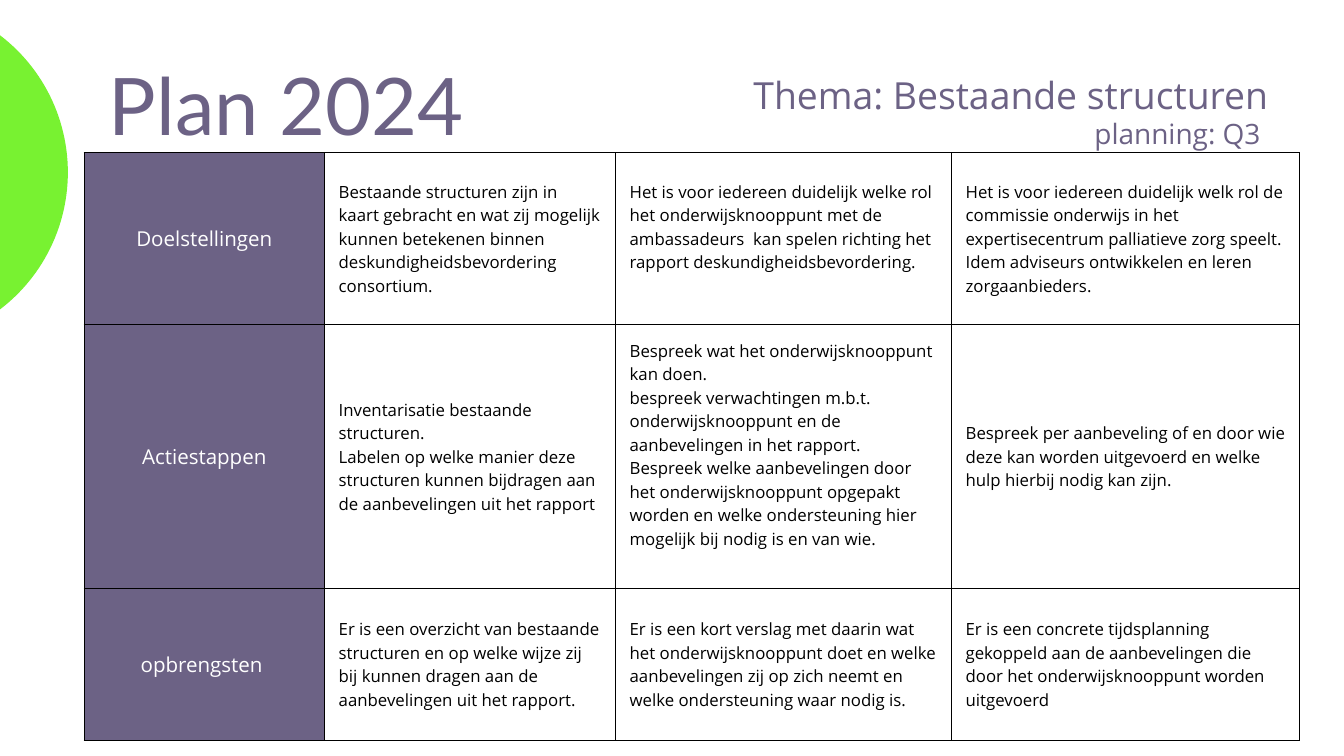
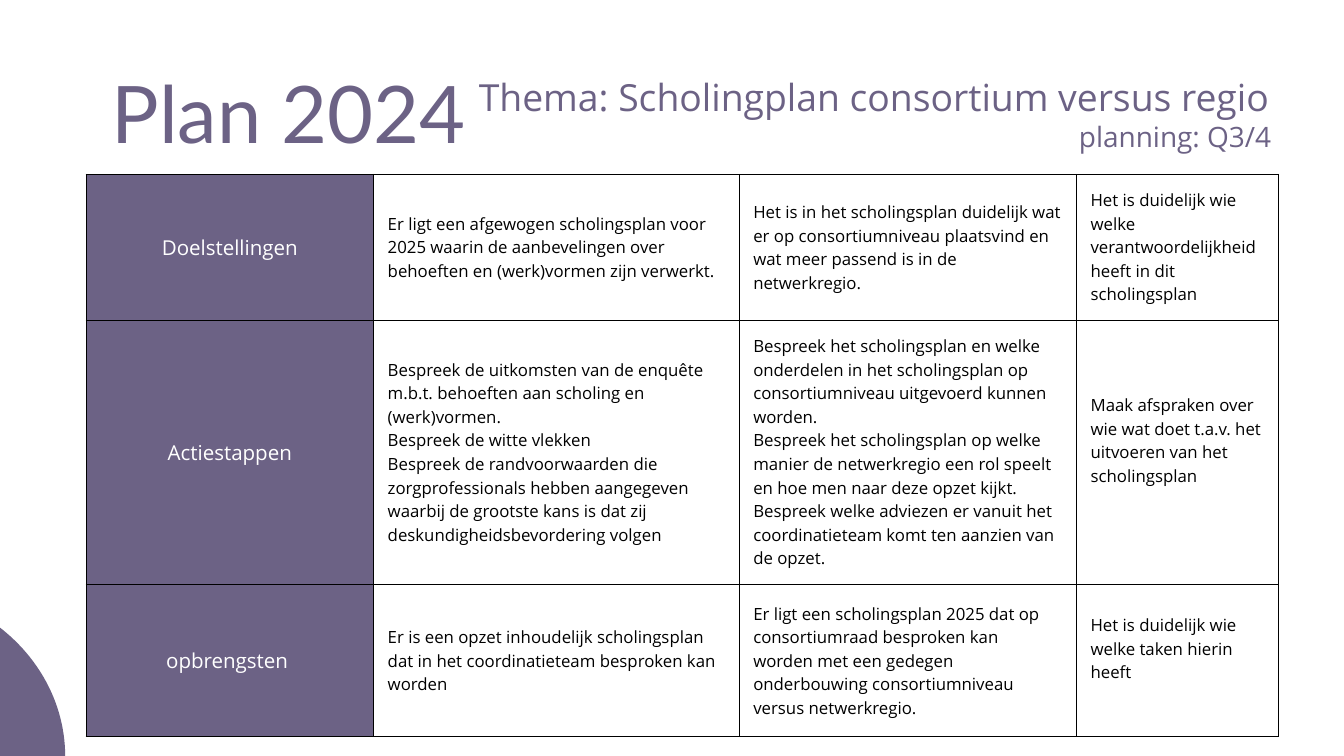
from lxml import etree
from pptx import Presentation
from pptx.dml.color import RGBColor
from pptx.enum.shapes import MSO_SHAPE
from pptx.enum.text import MSO_ANCHOR, MSO_AUTO_SIZE, PP_ALIGN
from pptx.oxml.ns import qn
from pptx.util import Inches, Pt

OVAL = MSO_SHAPE.OVAL
TOP, MIDDLE = MSO_ANCHOR.TOP, MSO_ANCHOR.MIDDLE
GROW = MSO_AUTO_SIZE.SHAPE_TO_FIT_TEXT
LEFT, CENTER, RIGHT = PP_ALIGN.LEFT, PP_ALIGN.CENTER, PP_ALIGN.RIGHT

# Grid of 80 columns by 45 rows on a 20 x 11.25 inch slide
UNIT = 0.25
COLUMNS, ROWS = 80, 45

PURPLE, GREEN, WHITE, BLACK = "6C6285", "78F231", "FFFFFF", "000000"
TITLE_FONT, TEXT_FONT = "Lato", "Open Sans"
ROW_LABELS = ["Doelstellingen", "Actiestappen", "opbrengsten "]
CELL_MARGIN = 0.21
RAISED_MARGIN = 0.56


def grid(value):
    return Inches(value * UNIT)


def color(hex_code):
    return RGBColor.from_string(hex_code)


class PlanDeck:
    def __init__(self):
        self.presentation = Presentation()
        self.presentation.slide_width = grid(COLUMNS)
        self.presentation.slide_height = grid(ROWS)
        self.slide = None

    def add_slide(self):
        layout = self.presentation.slide_layouts[1]
        self.slide = self.presentation.slides.add_slide(layout)

    def format_paragraph(self, paragraph, size, line, font, ink, alignment):
        paragraph.alignment = alignment
        paragraph.line_spacing = Pt(line)
        paragraph.space_before = Pt(0)
        for run in paragraph.runs:
            run.font.size = Pt(size)
            run.font.name = font
            run.font.color.rgb = color(ink)

    def place(self, shape, left, top, width, height):
        shape.left, shape.top = grid(left), grid(top)
        shape.width, shape.height = grid(width), grid(height)
        frame = shape.text_frame
        frame.margin_left = frame.margin_right = 0
        frame.margin_top = frame.margin_bottom = 0
        frame.vertical_anchor = TOP
        frame.word_wrap = True
        frame.auto_size = GROW
        return frame

    def title(self, text, left, top):
        frame = self.place(self.slide.shapes.title, left, top, 24.44, 5.68)
        frame.text = text
        self.format_paragraph(frame.paragraphs[0], 85, 102, TITLE_FONT, PURPLE, RIGHT)

    def theme(self, theme, planning, left, top, width):
        frame = self.place(self.slide.placeholders[1], left, top, width, 4.72)
        frame.text = f"{theme}\n{planning}"
        for paragraph, size in zip(frame.paragraphs, (40, 30)):
            self.format_paragraph(paragraph, size, size * 1.2, TEXT_FONT, PURPLE, RIGHT)
            properties = paragraph._p.get_or_add_pPr()
            properties.set("marL", "0")
            properties.set("indent", "0")
            etree.SubElement(properties, qn("a:buNone"))

    def circle(self, left, top, width, height, fill):
        shape = self.slide.shapes.add_shape(
            OVAL, grid(left), grid(top), grid(width), grid(height))
        shape.shadow.inherit = False
        shape.fill.solid()
        shape.fill.fore_color.rgb = color(fill)
        shape.line.fill.background()

    def border(self, cell):
        properties = cell._tc.get_or_add_tcPr()
        for side in ("lnL", "lnR", "lnT", "lnB"):
            line = etree.SubElement(properties, qn(f"a:{side}"), w=str(Pt(0.75)))
            fill = etree.SubElement(line, qn("a:solidFill"))
            etree.SubElement(fill, qn("a:srgbClr"), val=BLACK)

    def cell(self, cell, text, is_label, is_raised):
        cell.text = text
        cell.vertical_anchor = MIDDLE
        cell.margin_left = cell.margin_right = cell.margin_top = Inches(CELL_MARGIN)
        cell.margin_bottom = Inches(RAISED_MARGIN if is_raised else CELL_MARGIN)
        self.border(cell)
        cell.fill.solid()
        cell.fill.fore_color.rgb = color(PURPLE if is_label else WHITE)
        size, ink, alignment = (22, WHITE, CENTER) if is_label else (18, BLACK, LEFT)
        for paragraph in cell.text_frame.paragraphs:
            self.format_paragraph(paragraph, size, size * 1.4, TEXT_FONT, ink, alignment)

    def plan_table(self, left, top, widths, heights, plan, raised):
        """Draw the plan; cells in raised keep a spare line below their text."""
        table = self.slide.shapes.add_table(
            len(heights), len(widths), grid(left), grid(top),
            grid(sum(widths)), grid(sum(heights))).table
        table.first_row = table.horz_banding = False
        for column, width in zip(table.columns, widths):
            column.width = grid(width)
        for row, height in zip(table.rows, heights):
            row.height = grid(height)
        for row_index, (label, texts) in enumerate(zip(ROW_LABELS, plan)):
            for column_index, text in enumerate([label, *texts]):
                self.cell(table.cell(row_index, column_index), text,
                          column_index == 0, (row_index, column_index) in raised)


STRUCTURES_PLAN = [
    ["Bestaande structuren zijn in kaart gebracht en wat zij mogelijk kunnen "
     "betekenen binnen deskundigheidsbevordering consortium.",
     "Het is voor iedereen duidelijk welke rol het onderwijsknooppunt met de "
     "ambassadeurs  kan spelen richting het rapport deskundigheidsbevordering.",
     "Het is voor iedereen duidelijk welk rol de commissie onderwijs in het "
     "expertisecentrum palliatieve zorg speelt.\n"
     "Idem adviseurs ontwikkelen en leren zorgaanbieders."],
    ["Inventarisatie bestaande structuren.\n"
     "Labelen op welke manier deze structuren kunnen bijdragen aan de "
     "aanbevelingen uit het rapport",
     "Bespreek wat het onderwijsknooppunt kan doen.\n"
     "bespreek verwachtingen m.b.t. onderwijsknooppunt en de aanbevelingen "
     "in het rapport.\n"
     "Bespreek welke aanbevelingen door het onderwijsknooppunt opgepakt worden "
     "en welke ondersteuning hier mogelijk bij nodig is en van wie.",
     "Bespreek per aanbeveling of en door wie deze kan worden uitgevoerd en "
     "welke hulp hierbij nodig kan zijn."],
    ["Er is een overzicht van bestaande structuren en op welke wijze zij bij "
     "kunnen dragen aan de aanbevelingen uit het rapport.",
     "Er is een kort verslag met daarin wat het onderwijsknooppunt doet en welke "
     "aanbevelingen zij op zich neemt en welke ondersteuning waar nodig is.",
     "Er is een concrete tijdsplanning gekoppeld aan de aanbevelingen die door "
     "het onderwijsknooppunt worden uitgevoerd"],
]

TRAINING_PLAN = [
    ["Er ligt een afgewogen scholingsplan voor 2025 waarin de aanbevelingen over "
     "behoeften en (werk)vormen zijn verwerkt.",
     "Het is in het scholingsplan duidelijk wat er op consortiumniveau plaatsvind "
     "en wat meer passend is in de netwerkregio.",
     "Het is duidelijk wie welke verantwoordelijkheid heeft in dit scholingsplan"],
    ["Bespreek de uitkomsten van de enquête m.b.t. behoeften aan scholing en "
     "(werk)vormen.\n"
     "Bespreek de witte vlekken\n"
     "Bespreek de randvoorwaarden die zorgprofessionals hebben aangegeven waarbij "
     "de grootste kans is dat zij deskundigheidsbevordering volgen",
     "Bespreek het scholingsplan en welke onderdelen in het scholingsplan op "
     "consortiumniveau uitgevoerd kunnen worden.\n"
     "Bespreek het scholingsplan op welke manier de netwerkregio een rol speelt "
     "en hoe men naar deze opzet kijkt.\n"
     "Bespreek welke adviezen er vanuit het coordinatieteam komt ten aanzien van "
     "de opzet.",
     "Maak afspraken over wie wat doet t.a.v. het uitvoeren van het scholingsplan"],
    ["Er is een opzet inhoudelijk scholingsplan dat in het coordinatieteam "
     "besproken kan worden",
     "Er ligt een scholingsplan 2025 dat op consortiumraad besproken kan worden "
     "met een gedegen onderbouwing consortiumniveau versus netwerkregio.",
     "Het is duidelijk wie welke taken hierin heeft"],
]


def main():
    deck = PlanDeck()

    # Existing structures
    deck.add_slide()
    deck.plan_table(5, 9.08, [14.32, 17.32, 20, 20.72], [10.24, 15.64, 9.08],
                    STRUCTURES_PLAN, raised={(0, 2), (1, 2)})
    deck.theme("Thema: Bestaande structuren", "planning: Q3 ", 42.24, 4.28, 33.24)
    deck.title("Plan 2024", 3.12, 3.32)
    deck.circle(-16.48, 0, 20.52, 20.52, GREEN)

    # Training plan
    deck.add_slide()
    deck.plan_table(5.12, 10.36, [17.12, 21.76, 20.08, 12.04], [8.64, 15.72, 9.08],
                    TRAINING_PLAN, raised={(1, 3), (2, 3)})
    deck.theme("Thema: Scholingplan consortium versus regio ", "planning: Q3/4 ",
               28.28, 4.44, 47.84)
    deck.circle(-18.4, 34.92, 22.28, 20.2, PURPLE)
    deck.title("Plan 2024", 3.28, 3.84)

    deck.presentation.save("out.pptx")


if __name__ == "__main__":
    main()
